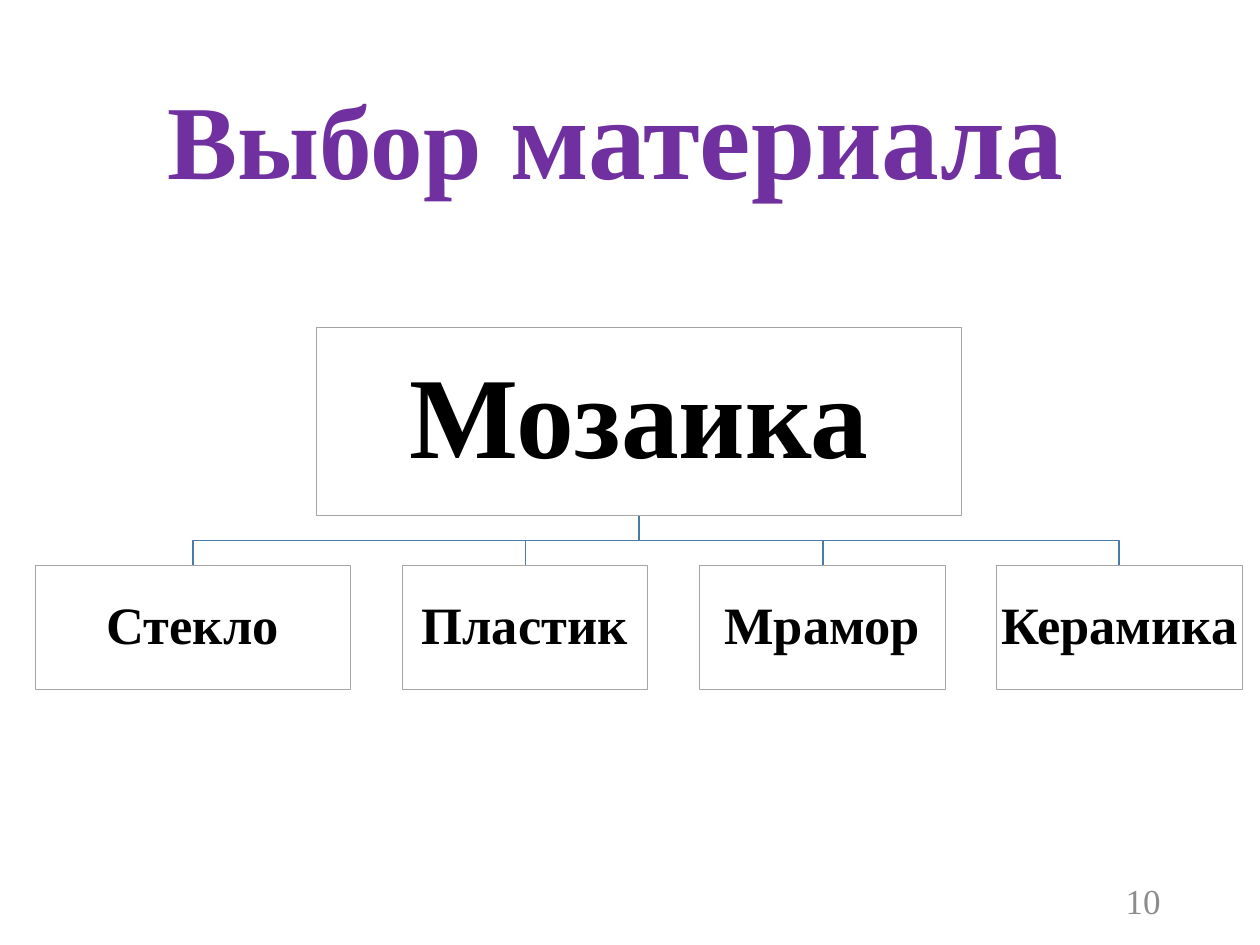
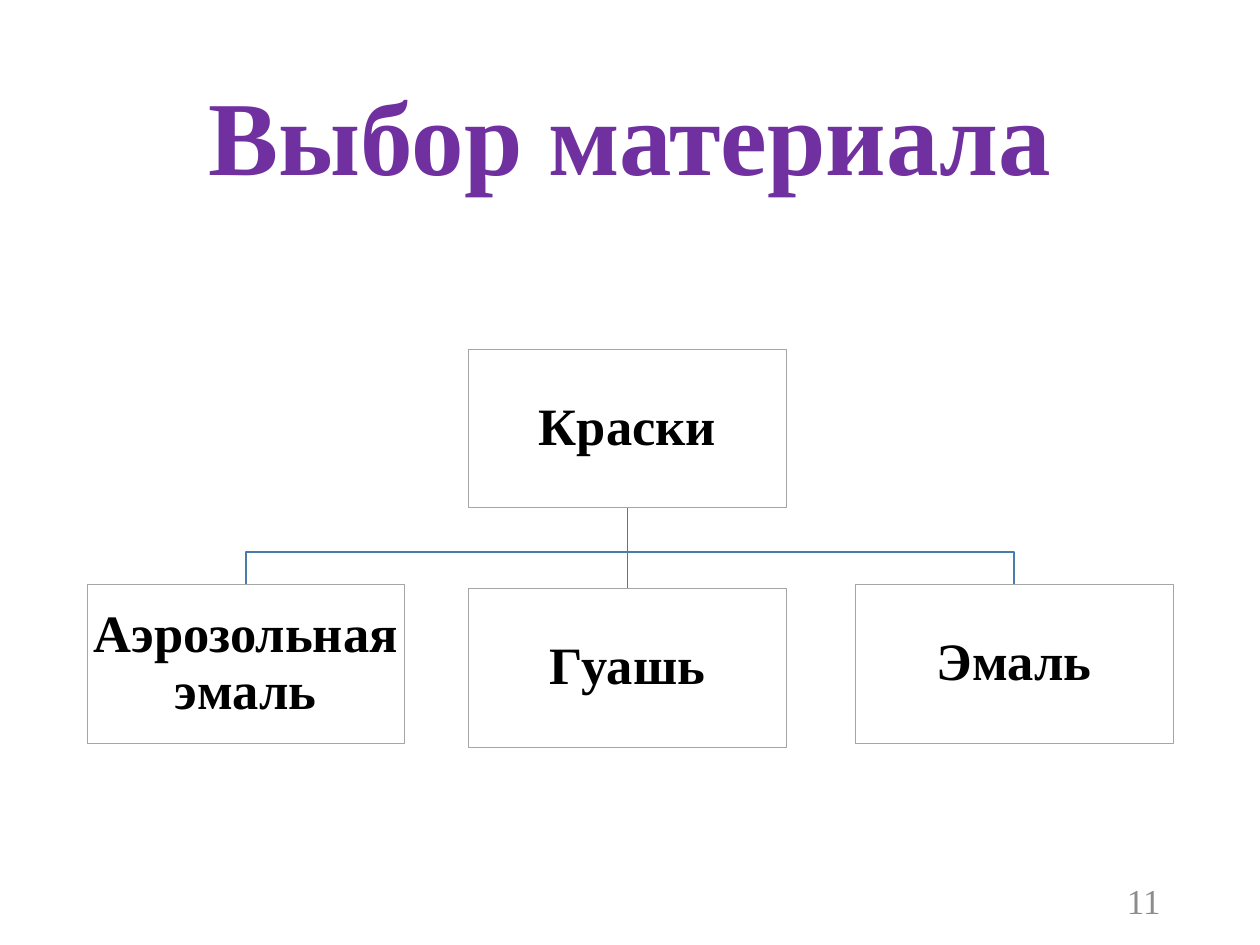
from dataclasses import dataclass
from itertools import accumulate
from lxml import etree
from pptx import Presentation
from pptx import util as u
from pptx.dml import color
from pptx.enum import shapes, text
from pptx.oxml import ns


@dataclass(frozen=True)
class Theme:
    face: str = "Times New Roman"
    title: str = "7030A0"
    ink: str = "000000"
    paper: str = "FFFFFF"
    edge: str = "A5A5A5"
    link: str = "497CAB"
    page: str = "8C8C8C"
    huge: int = 66
    head: int = 60
    node: int = 30
    foot: int = 20


def rgb(code):
    return color.RGBColor.from_string(code)


def inch(vals):
    return [u.Inches(v) for v in vals]


def apply(obj, form):
    for key, val in form.items():
        setattr(obj, key, val)


class Deck:
    def __init__(self, theme):
        self.theme = theme
        self.prs = Presentation()
        self.prs.slide_width, self.prs.slide_height = inch((10, 7.5))
        self.slide = None

    def label(self, shape, runs, tint, bold=True, align="CENTER", lead=0.9, pad=None):
        frame = shape.text_frame
        apply(frame, {"word_wrap": True, "auto_size": text.MSO_AUTO_SIZE.NONE,
                      "vertical_anchor": text.MSO_ANCHOR.MIDDLE})
        if pad is not None:
            sides = ("left", "right", "top", "bottom")
            apply(frame, {f"margin_{side}": u.Inches(pad) for side in sides})
        para = frame.paragraphs[0]
        apply(para, {"alignment": getattr(text.PP_ALIGN, align), "line_spacing": lead})
        for words, size in runs:
            run = para.add_run()
            run.text = words
            apply(run.font, {"name": self.theme.face, "size": u.Pt(size), "bold": bold})
            run.font.color.rgb = rgb(tint)

    def start(self, runs, page):
        self.slide = self.prs.slides.add_slide(self.prs.slide_layouts[5])
        title = self.slide.shapes.title
        spot = inch((0.69, 0.4, 8.62, 1.45))
        apply(title, dict(zip(("left", "top", "width", "height"), spot)))
        self.label(title, runs, self.theme.title)
        foot = self.slide.shapes.add_textbox(*inch((7.06, 6.95, 2.25, 0.4)))
        self.label(foot, [(page, self.theme.foot)], self.theme.page,
                   bold=False, align="RIGHT", lead=1.0)

    def stroke(self, shape, tint, width):
        shape.line.color.rgb = rgb(tint)
        shape.line.width = u.Pt(width)

    def box(self, words, spot, size, pad=0.02):
        rect = self.slide.shapes.add_shape(shapes.MSO_SHAPE.RECTANGLE, *inch(spot))
        rect.shadow.inherit = False
        rect.fill.solid()
        rect.fill.fore_color.rgb = rgb(self.theme.paper)
        self.stroke(rect, self.theme.edge, 0.5)
        self.label(rect, [(words, size)], self.theme.ink, pad=pad)

    def link(self, x, y, mid, end, stop):
        if x == end:
            line = self.slide.shapes.add_connector(
                shapes.MSO_CONNECTOR.STRAIGHT, *inch((x, y, end, stop)))
            etree.SubElement(line._element.spPr, ns.qn("a:effectLst"))
        else:
            pen = self.slide.shapes.build_freeform(*inch((x, y)))
            turns = [(x, mid), (end, mid), (end, stop)]
            pen.add_line_segments([inch(turn) for turn in turns], close=False)
            line = pen.convert_to_shape()
            line.fill.background()
            line.shadow.inherit = False
        self.stroke(line, self.theme.link, 1)

    def tree(self, root, spot, kids, mid, size, pad=0.02):
        left, top, width, height = spot
        hub = round(left + width / 2, 2)
        for _, (x, y, wide, _) in kids:
            self.link(hub, top + height, mid, round(x + wide / 2, 2), y)
        self.box(root, spot, size, pad)
        for words, place in kids:
            self.box(words, place, self.theme.node)


def main():
    theme = Theme()
    deck = Deck(theme)

    deck.start([("Выбор", theme.head), (" материала ", theme.huge)], "10")
    names = ("Стекло", "Пластик", "Мрамор", "Керамика")
    wides = (2.5, 1.95, 1.95, 1.95)
    lefts = accumulate((wide + 0.41 for wide in wides[:-1]), initial=0.28)
    kids = [(name, (left, 4.49, wide, 0.98))
            for name, left, wide in zip(names, lefts, wides)]
    deck.tree("Мозаика", (2.51, 2.6, 5.12, 1.49), kids, 4.29, theme.huge, 0.05)

    deck.start([("Выбор материала", theme.head)], "11")
    wide, high = 2.52, 1.26
    spots = (("Аэрозольная эмаль", 0.69, 4.64), ("Гуашь", 3.72, 4.67), ("Эмаль", 6.79, 4.64))
    kids = [(name, (left, top, wide, high)) for name, left, top in spots]
    deck.tree("Краски", (3.72, 2.77, wide, high), kids, 4.38, theme.node)

    deck.prs.save("out.pptx")


if __name__ == "__main__":
    main()
